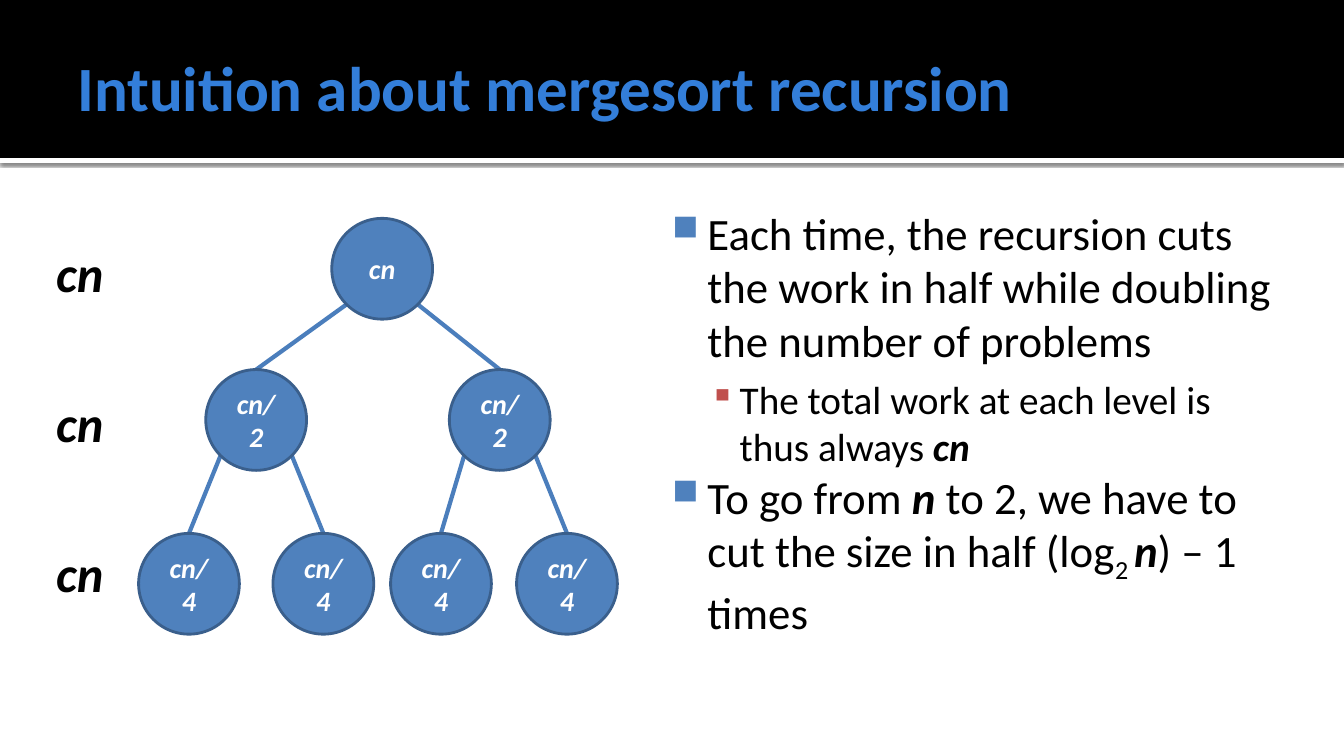
import lxml.etree
import pptx
import pptx.dml.color
import pptx.enum.shapes
import pptx.enum.text
import pptx.oxml
import pptx.oxml.ns
import pptx.util

THEME = {
    "font": "Calibri",
    "black": "000000", "white": "FFFFFF", "title": "337ED9",
    "node": "4F81BD", "outline": "3A5F8C", "edge": "4B7EBC", "accent": "C0504D",
    "title_size": 45, "label_size": 36, "body_size": 32, "detail_size": 28, "node_size": 20,
}
ALIGN = pptx.enum.text.PP_ALIGN
MIDDLE = pptx.enum.text.MSO_ANCHOR.MIDDLE
SHAPES = pptx.enum.shapes.MSO_SHAPE
qn = pptx.oxml.ns.qn


def color(name):
    return pptx.dml.color.RGBColor.from_string(THEME[name])


def format_runs(paragraph, size, color_name, bold=False, italic=False):
    for run in paragraph.runs:
        run.font.name = THEME["font"]
        run.font.size = pptx.util.Pt(THEME[size])
        run.font.color.rgb = color(color_name)
        run.font.bold = bold
        run.font.italic = italic


presentation = pptx.Presentation()
presentation.slide_width = pptx.util.Inches(40 / 3)
presentation.slide_height = pptx.util.Inches(7.5)
slide = presentation.slides.add_slide(presentation.slide_layouts[5])
shapes = slide.shapes

# Grid of 160 columns by 90 rows with square cells
cell = presentation.slide_width / 160

# Header: white strip with a soft shadow, then the black band
band_height = 18.8
for top, height, fill in [(band_height, 0.6, "white"), (0, band_height, "black")]:
    band = shapes.add_shape(SHAPES.RECTANGLE, 0, int(top * cell),
                            presentation.slide_width, int(height * cell))
    band.fill.solid()
    band.fill.fore_color.rgb = color(fill)
    band.line.fill.background()
    band.shadow.inherit = False
    if fill == "white":
        effects = band.element.spPr.find(qn("a:effectLst"))
        shadow = lxml.etree.SubElement(effects, qn("a:outerShdw"), blurRad="31750",
                                       dist="10160", dir="5400000", rotWithShape="0")
        shade = lxml.etree.SubElement(shadow, qn("a:srgbClr"), val=THEME["black"])
        lxml.etree.SubElement(shade, qn("a:alpha"), val="60000")

# Title, brought in front of the band
title = shapes.title
title.left, title.top, title.width, title.height = [
    int(length * cell) for length in (8, 2, 144, 16.5)]
title_frame = title.text_frame
title_frame.text = "Intuition about mergesort recursion"
title_frame.vertical_anchor = MIDDLE
title_frame.margin_right = pptx.util.Inches(0.05)
title_frame.paragraphs[0].alignment = ALIGN.LEFT
format_runs(title_frame.paragraphs[0], "title_size", "title", bold=True)
shapes.element.append(title.element)

# Recursion tree: level by level, each node's parent is at (index - 1) // 2
diameter = 12
levels = [
    (26, "cn", [45.5]),
    (44, "cn/2", [30.5, 59.5]),
    (63.5, "cn/4", [22.5, 38.5, 52.5, 67.5]),
]
nodes = [(center, top, text) for top, text, centers in levels for center in centers]

# Edges run from the parent's lower diagonal point to the top of the child
diagonal = diameter / 2 * 0.5 ** 0.5
for index, (center, top, text) in enumerate(nodes[1:], start=1):
    parent_center, parent_top, _ = nodes[(index - 1) // 2]
    side = -1 if index % 2 else 1
    edge = shapes.add_connector(
        pptx.enum.shapes.MSO_CONNECTOR.STRAIGHT,
        int((parent_center + side * diagonal) * cell),
        int((parent_top + diameter / 2 + diagonal) * cell),
        int(center * cell), int(top * cell))
    edge.line.color.rgb = color("edge")
    edge.line.width = pptx.util.Pt(3)
    lxml.etree.SubElement(edge.element.spPr, qn("a:effectLst"))

for center, top, text in nodes:
    node = shapes.add_shape(SHAPES.OVAL, int((center - diameter / 2) * cell), int(top * cell),
                            int(diameter * cell), int(diameter * cell))
    node.fill.solid()
    node.fill.fore_color.rgb = color("node")
    node.line.color.rgb = color("outline")
    node.line.width = pptx.util.Pt(2)
    node.shadow.inherit = False
    node.text_frame.text = text
    node.text_frame.word_wrap = True
    node.text_frame.vertical_anchor = MIDDLE
    node.text_frame.paragraphs[0].alignment = ALIGN.CENTER
    format_runs(node.text_frame.paragraphs[0], "node_size", "white", bold=True, italic=True)

# Work per level, one label beside each row of the tree
labels = shapes.add_textbox(int(3.5 * cell), int(28.25 * cell), int(12 * cell), int(45 * cell))
labels.text_frame.word_wrap = True
labels.text_frame.text = "\n".join(["cn"] * len(levels))
for index, paragraph in enumerate(labels.text_frame.paragraphs):
    paragraph.alignment = ALIGN.CENTER
    paragraph.space_before = pptx.util.Pt(64 if index else 0)
    format_runs(paragraph, "label_size", "black", bold=True, italic=True)

# Explanation: each run is its text and its style
body = shapes.add_textbox(int(77.75 * cell), int(23.25 * cell),
                          int(76.25 * cell), int(60.75 * cell))
body_frame = body.text_frame
body_frame.word_wrap = True
body_frame.margin_left = pptx.util.Inches(0.06)
body_frame.margin_top = pptx.util.Inches(0.1)
points = [
    (0, [("Each time, the recursion cuts the work in half while doubling "
          "the number of problems", "plain")]),
    (1, [("The total work at each level is thus always ", "plain"), ("cn", "variable")]),
    (0, [("To go from ", "plain"), ("n", "variable"),
         (" to 2, we have to cut the size in half (log", "plain"), ("2 ", "subscript"),
         ("n", "variable"), (") – 1 times", "plain")]),
]
# Size, left margin, indent, space before, bullet, bullet colour, bullet size
bullet_levels = [
    ("body_size", 0.48, -0.35, 0, "■", "node", "80000"),
    ("detail_size", 0.8, -0.3, 6, "▪", "accent", "90000"),
]
for index, (level, runs) in enumerate(points):
    size, margin, indent, gap, bullet, bullet_color, bullet_size = bullet_levels[level]
    paragraph = body_frame.add_paragraph() if index else body_frame.paragraphs[0]
    paragraph.level = level
    paragraph.space_before = pptx.util.Pt(gap)
    for text, style in runs:
        paragraph.add_run().text = text
    format_runs(paragraph, size, "black")
    for run, (text, style) in zip(paragraph.runs, runs):
        run.font.bold = run.font.italic = style == "variable"
        if style == "subscript":
            run.font._element.set("baseline", "-25000")
    properties = paragraph._p.get_or_add_pPr()
    properties.set("marL", str(pptx.util.Inches(margin)))
    properties.set("indent", str(pptx.util.Inches(indent)))
    tint = lxml.etree.SubElement(properties, qn("a:buClr"))
    lxml.etree.SubElement(tint, qn("a:srgbClr"), val=THEME[bullet_color])
    lxml.etree.SubElement(properties, qn("a:buSzPct"), val=bullet_size)
    lxml.etree.SubElement(properties, qn("a:buChar"), char=bullet)

presentation.save("out.pptx")
